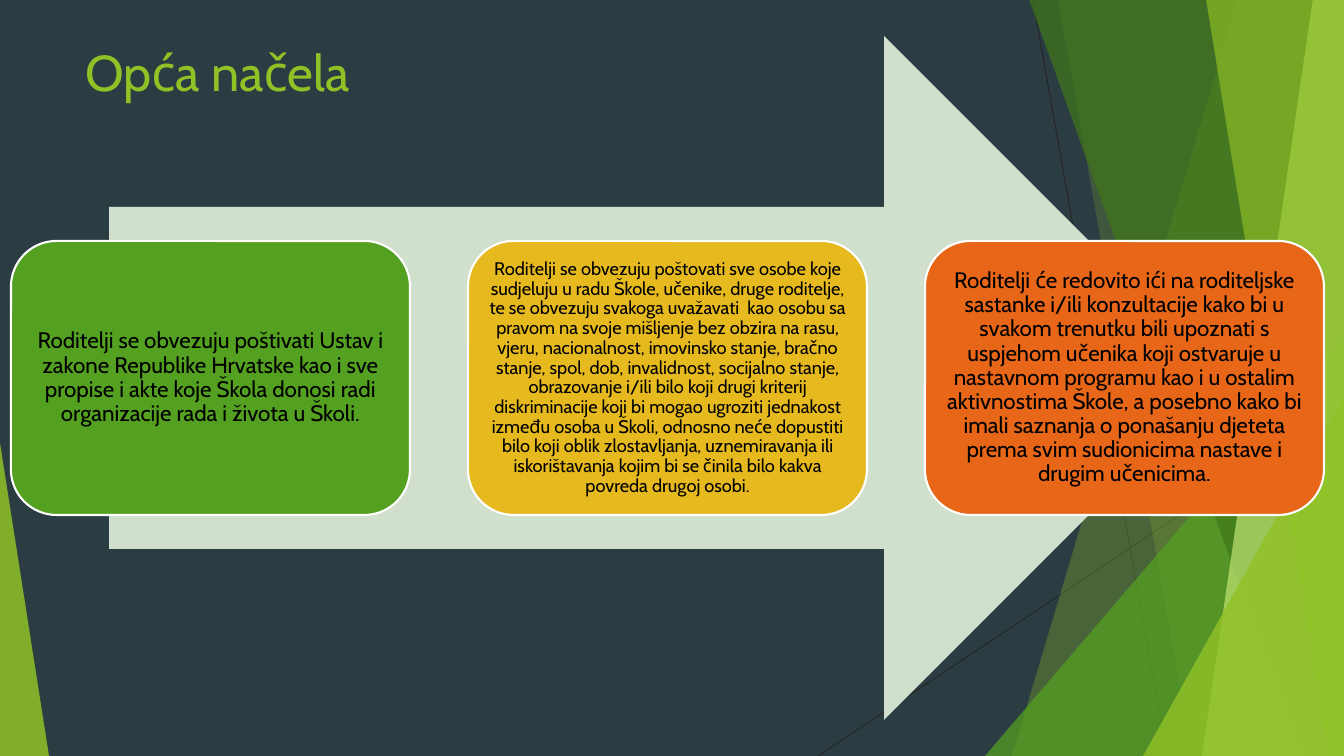
import pptx
import pptx.util
import pptx.dml.color
import pptx.enum.shapes
import pptx.enum.text
import pptx.oxml.ns
import lxml.etree

PX = 914400 / 100.8
HUES = {
    "night": "2C3C43", "lime": "90C226", "green": "54A021", "moss": "3F7819",
    "pale": "C0E474", "wire": "262626", "mint": "D1DFCD", "gold": "E6B91E",
    "rust": "E76618", "white": "FFFFFF", "black": "000000",
}
KINDS = pptx.enum.shapes.MSO_SHAPE
ALIGN = pptx.enum.text.PP_ALIGN
ANCHOR = pptx.enum.text.MSO_ANCHOR


def emu(*nums):
    return [pptx.util.Emu(round(n * PX)) for n in nums]


def tint(form, hue, alpha=100):
    """Give a fill, line or font one solid colour, with opacity in percent."""
    form.solid()
    form.fore_color.rgb = pptx.dml.color.RGBColor.from_string(HUES[hue])
    if alpha < 100:
        node = form._xPr.find(".//" + pptx.oxml.ns.qn("a:srgbClr"))
        tag = pptx.oxml.ns.qn("a:alpha")
        lxml.etree.SubElement(node, tag).set("val", str(alpha * 1000))


deck = pptx.Presentation()
deck.slide_width, deck.slide_height = emu(1344, 756)
slide = deck.slides.add_slide(deck.slide_layouts[5])
shapes = slide.shapes
tint(slide.background.fill, "night")

# Title
title = shapes.title
title.left, title.top, title.width, title.height = emu(75, 36, 948, 145)
frame = title.text_frame
frame.text = "Opća načela"
frame.vertical_anchor = ANCHOR.TOP
para = frame.paragraphs[0]
para.alignment = ALIGN.LEFT
for key, val in {"name": "Cabin", "size": pptx.util.Pt(36)}.items():
    setattr(para.font, key, val)
tint(para.font.fill, "lime")

# Thin lines behind the facets
for ends in [(1033, 0, 1167, 756), (1344, 406, 818, 756)]:
    wire = shapes.add_connector(pptx.enum.shapes.MSO_CONNECTOR.STRAIGHT, *emu(*ends))
    tint(wire.line.fill, "wire")
    wire.line.width = pptx.util.Pt(0.75)
    lxml.etree.SubElement(wire._element.spPr, pptx.oxml.ns.qn("a:effectLst"))

# Facets: a quad is (top x, bottom x) up to the right edge,
# a triangle is (left, top, width, tip), its base on the bottom edge
FACETS = [
    ((1238, 1012), "lime", 30),
    ((1058, 1192), "lime", 20),
    ((985, 336, 359, 1), "green", 72),
    ((1029, 1301), "moss", 70),
    ((1313, 1202), "pale", 70),
    ((1206, 1329), "lime", 65),
    ((1143, 396, 201, 1), "lime", 80),
    ((0, 443, 49, 0), "lime", 85),
]
for dims, hue, alpha in FACETS:
    if len(dims) == 2:
        top, low = dims
        path = shapes.build_freeform(top, -1, scale=PX)
        path.add_line_segments([(1344, -1), (1344, 756), (low, 756)])
        facet = path.convert_to_shape()
    else:
        left, top, wide, tip = dims
        facet = shapes.add_shape(KINDS.ISOSCELES_TRIANGLE, *emu(left, top, wide, 756 - top))
        facet.adjustments[0] = tip
    tint(facet.fill, hue, alpha)
    facet.line.fill.background()
    facet.shadow.inherit = False

# Large arrow
arrow = shapes.add_shape(KINDS.RIGHT_ARROW, *emu(109, 36, 1117, 684))
tint(arrow.fill, "mint")
arrow.line.fill.background()
arrow.shadow.inherit = False

# Three cards at an equal step: colour, text size, inset, text
CARDS = [
    ("green", 16, 7,
     "Roditelji se obvezuju poštivati Ustav i zakone Republike Hrvatske kao i sve "
     "propise i akte koje Škola donosi radi organizacije rada i života u Školi."),
    ("gold", 13, 5,
     "Roditelji se obvezuju poštovati sve osobe koje sudjeluju u radu Škole, učenike, "
     "druge roditelje, te se obvezuju svakoga uvažavati  kao osobu sa pravom na svoje "
     "mišljenje bez obzira na rasu, vjeru, nacionalnost, imovinsko stanje, bračno "
     "stanje, spol, dob, invalidnost, socijalno stanje, obrazovanje i/ili bilo koji "
     "drugi kriterij diskriminacije koji bi mogao ugroziti jednakost između osoba u "
     "Školi, odnosno neće dopustiti bilo koji oblik zlostavljanja, uznemiravanja ili "
     "iskorištavanja kojim bi se činila bilo kakva povreda drugoj osobi."),
    ("rust", 16, 7,
     "Roditelji će redovito ići na roditeljske sastanke i/ili konzultacije kako bi u "
     "svakom trenutku bili upoznati s uspjehom učenika koji ostvaruje u nastavnom "
     "programu kao i u ostalim aktivnostima Škole, a posebno kako bi imali saznanja o "
     "ponašanju djeteta prema svim sudionicima nastave i drugim učenicima."),
]
for spot, (hue, size, inset, words) in enumerate(CARDS):
    card = shapes.add_shape(KINDS.ROUNDED_RECTANGLE, *emu(11 + 457 * spot, 241, 399, 274))
    card.shadow.inherit = False
    tint(card.fill, hue)
    tint(card.line.fill, "white")
    card.line.width = pptx.util.Pt(1.5)
    frame = card.text_frame
    frame.text = words
    frame.word_wrap = True
    frame.vertical_anchor = ANCHOR.MIDDLE
    for side in ("left", "top", "right", "bottom"):
        setattr(frame, "margin_" + side, emu(inset)[0])
    para = frame.paragraphs[0]
    for key, val in {"alignment": ALIGN.CENTER, "line_spacing": 0.9}.items():
        setattr(para, key, val)
    for key, val in {"name": "Cabin", "size": pptx.util.Pt(size)}.items():
        setattr(para.font, key, val)
    tint(para.font.fill, "black")

deck.save("out.pptx")
